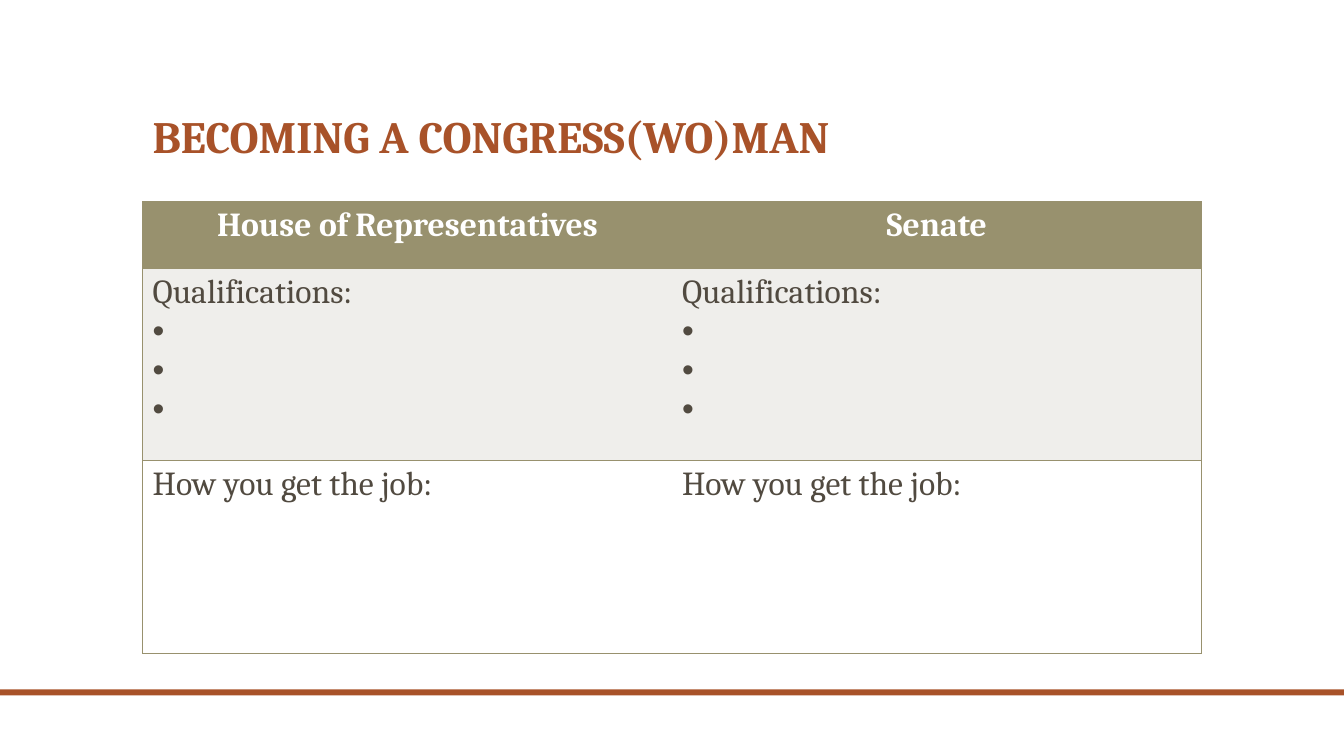
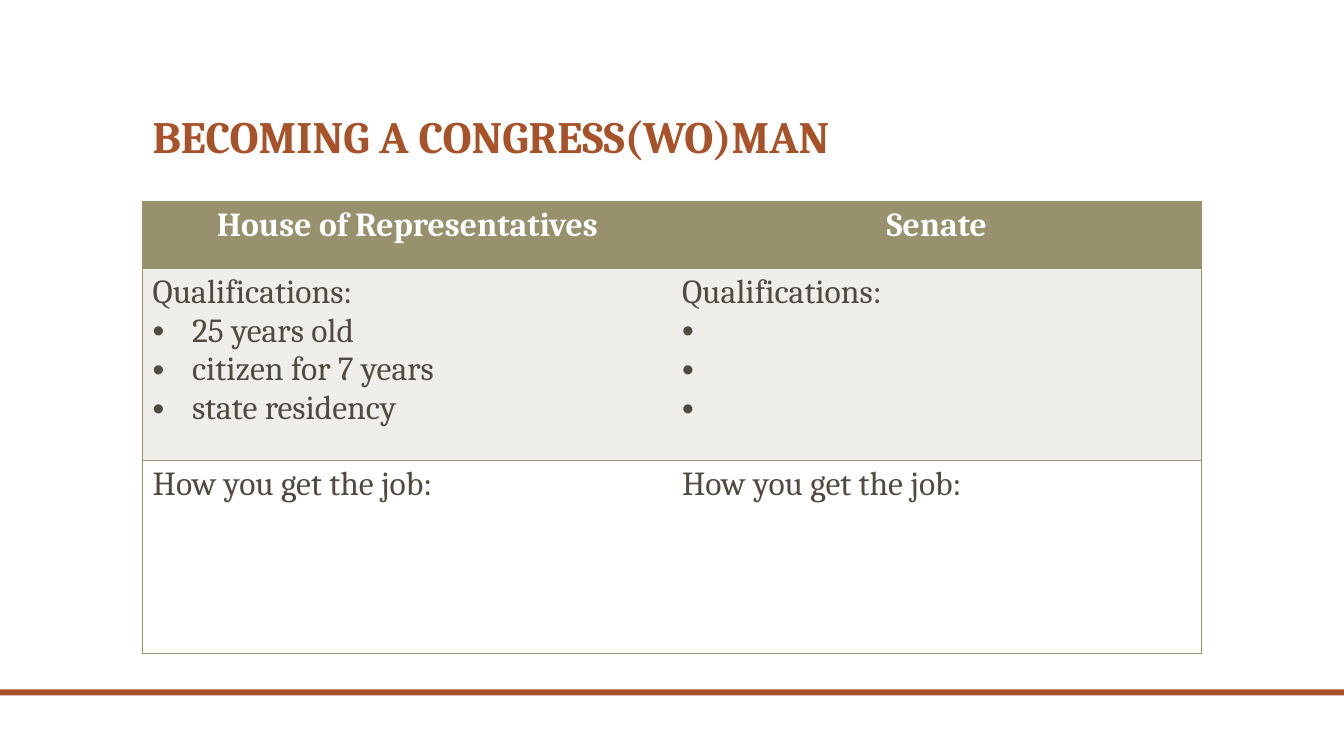
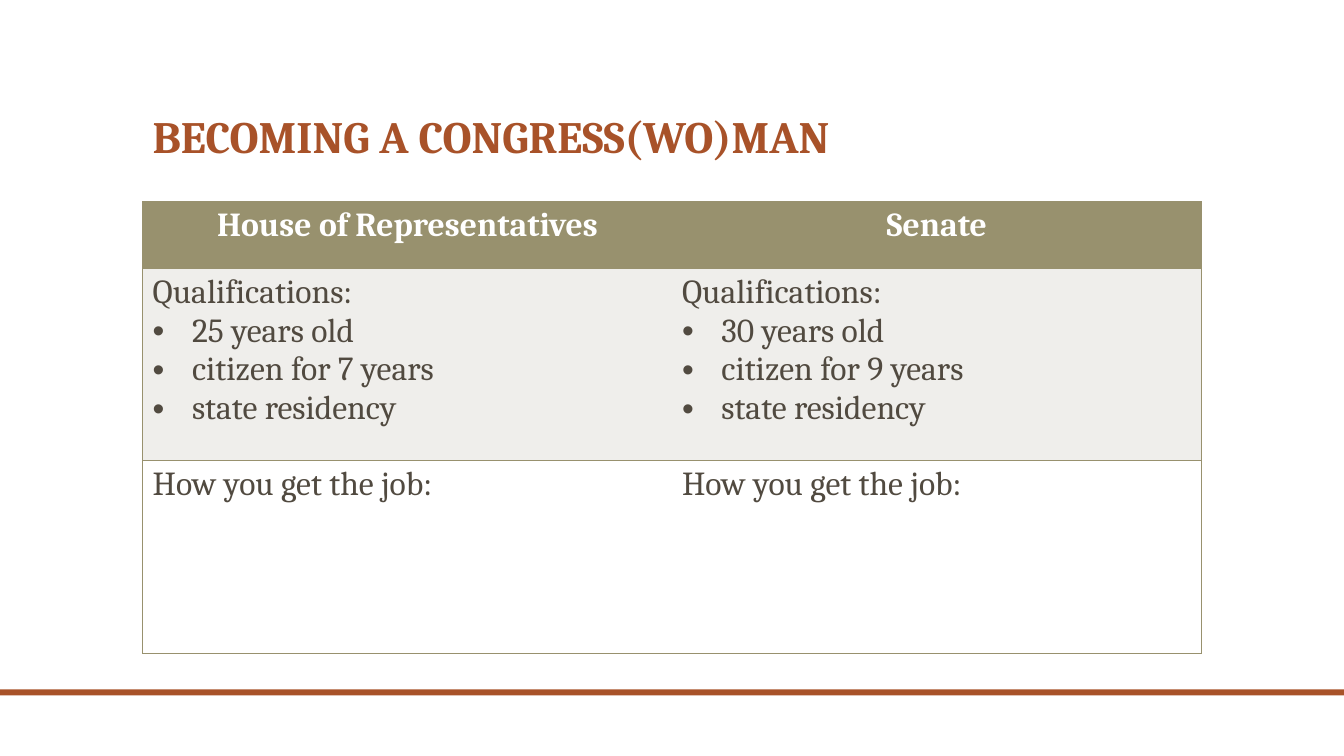
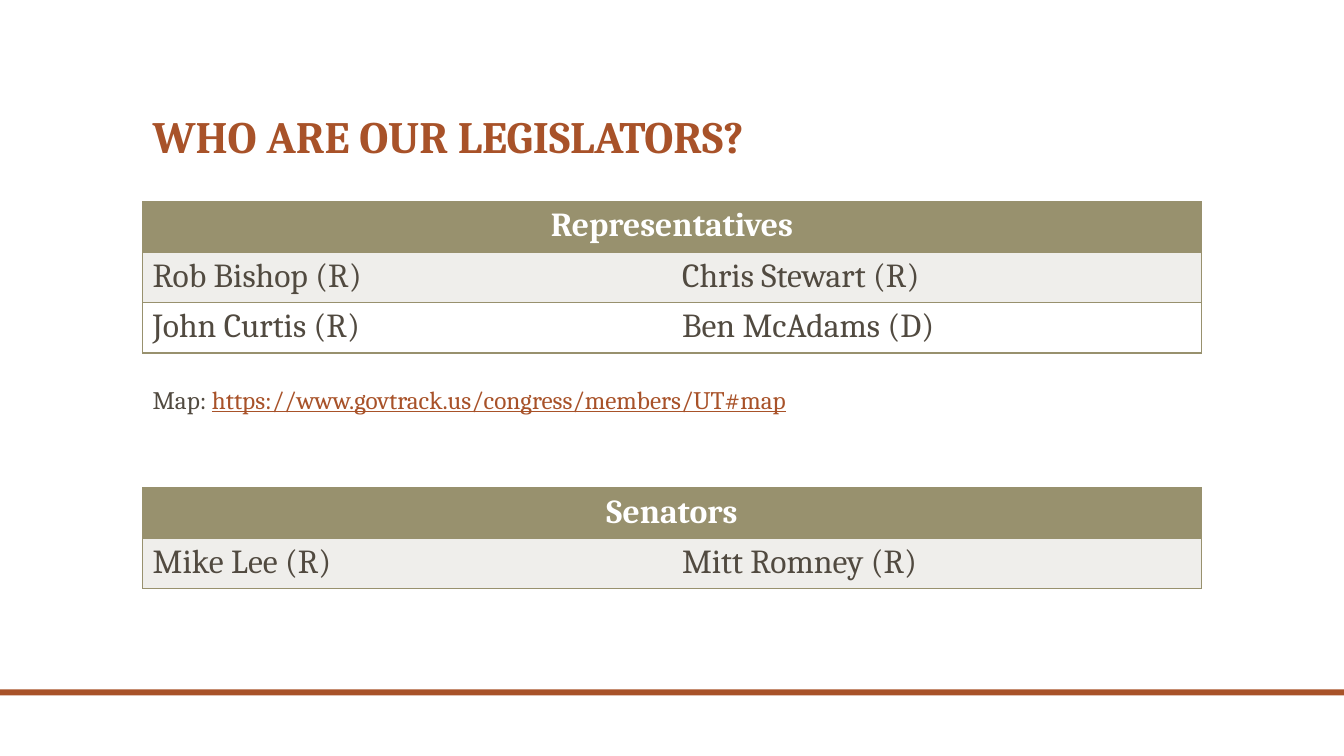
import pptx
import pptx.dml.color
import pptx.enum.shapes
import pptx.enum.text
import pptx.oxml.ns
import pptx.util
from lxml import etree
from dataclasses import dataclass

Inches = pptx.util.Inches
Pt = pptx.util.Pt
PP_ALIGN = pptx.enum.text.PP_ALIGN
ANCHOR = pptx.enum.text.MSO_ANCHOR


@dataclass(frozen=True)
class Theme:
    font: str = "Cambria"
    rust: str = "A85229"
    olive: str = "98916E"
    ink: str = "514A40"
    band: str = "EFEEEB"
    white: str = "FFFFFF"
    title_size: int = 32
    table_size: int = 24
    note_size: int = 18
    border: int = 1


THEME = Theme()

# Content: a list inside a cell becomes bullets, a one-cell row spans the table.
BLANK_ITEMS = [" "] * 3
HOUSE_ITEMS = ["25 years old", "citizen for 7 years", "state residency"]
SENATE_ITEMS = ["30 years old", "citizen for 9 years", "state residency"]
CHAMBER_STEPS = [
    (BLANK_ITEMS, BLANK_ITEMS),
    (HOUSE_ITEMS, BLANK_ITEMS),
    (HOUSE_ITEMS, SENATE_ITEMS),
]
REPRESENTATIVES = [
    ["Representatives"],
    ["Rob Bishop (R)", "Chris Stewart (R)"],
    ["John Curtis (R)", "Ben McAdams (D)"],
]
SENATORS = [
    ["Senators"],
    ["Mike Lee (R)", "Mitt Romney (R)"],
]
MAP_NOTE = ("Map: ", "https://www.govtrack.us/congress/members/UT#map")

# Layout, in inches
SLIDE_W, SLIDE_H = 13.33, 7.5
CONTENT_W = 10.5
LEFT = (SLIDE_W - CONTENT_W) / 2
TABLE_TOP = 2
COLUMNS = 2
CHAMBER_ROWS = [0.66, 1.91, 1.91]
NAME_ROW = 0.48
BULLET_INDENT = 0.39


def color(value):
    return pptx.dml.color.RGBColor.from_string(value)


def style(font, size, value, bold=False):
    font.name = THEME.font
    font.size = Pt(size)
    font.bold = bold
    font.color.rgb = color(value)


def add_text(slide, box, anchor=ANCHOR.TOP):
    tf = slide.shapes.add_textbox(*map(Inches, box)).text_frame
    tf.word_wrap = True
    tf.vertical_anchor = anchor
    return tf


def add_slide(prs, title):
    """Add a slide with the shared title and bottom band."""
    slide = prs.slides.add_slide(prs.slide_layouts[6])
    band = slide.shapes.add_shape(
        pptx.enum.shapes.MSO_SHAPE.RECTANGLE,
        0, Inches(6.84), Inches(SLIDE_W), Inches(0.06))
    band.shadow.inherit = False
    band.fill.solid()
    band.fill.fore_color.rgb = color(THEME.rust)
    band.line.fill.background()

    p = add_text(slide, (LEFT, 0.42, CONTENT_W, 1.25), ANCHOR.BOTTOM).paragraphs[0]
    p.text = title
    p.line_spacing = 0.9
    style(p.runs[0].font, THEME.title_size, THEME.rust, bold=True)
    return slide


def add_bullet(p):
    pPr = p._p.get_or_add_pPr()
    pPr.set("marL", str(Inches(BULLET_INDENT)))
    pPr.set("indent", str(-Inches(BULLET_INDENT)))
    qn = pptx.oxml.ns.qn
    etree.SubElement(pPr, qn("a:buFont"), typeface="Arial")
    etree.SubElement(pPr, qn("a:buChar"), char="•")


def set_borders(cell, sides):
    """Draw the named sides (of L, R, T, B) and clear the others."""
    qn = pptx.oxml.ns.qn
    tcPr = cell._tc.get_or_add_tcPr()
    for side in "LRTB":
        ln = etree.SubElement(tcPr, qn(f"a:ln{side}"), w=str(Pt(THEME.border)))
        if side in sides:
            fill = etree.SubElement(ln, qn("a:solidFill"))
            etree.SubElement(fill, qn("a:srgbClr"), val=THEME.olive)
        else:
            etree.SubElement(ln, qn("a:noFill"))


def fill_cell(cell, content, header):
    lines = content if isinstance(content, list) else [content]
    tf = cell.text_frame
    for i, line in enumerate(lines):
        p = tf.paragraphs[0] if i == 0 else tf.add_paragraph()
        if isinstance(line, tuple):
            p.text = line[0]
            add_bullet(p)
        else:
            p.text = line
        if header:
            p.alignment = PP_ALIGN.CENTER
        for r in p.runs:
            style(r.font, THEME.table_size, THEME.white if header else THEME.ink, header)


def add_table(slide, top, rows, heights):
    table = slide.shapes.add_table(
        len(rows), COLUMNS, Inches(LEFT), Inches(top),
        Inches(CONTENT_W), Inches(sum(heights))).table
    table.horz_banding = False
    row_fills = [THEME.olive, THEME.band, THEME.white]
    for i, (row, height) in enumerate(zip(rows, heights)):
        table.rows[i].height = Inches(height)
        spans = len(row) == 1
        for j in range(COLUMNS):
            cell = table.cell(i, j)
            left = "L" if j == 0 else ""
            right = "R" if spans or j == COLUMNS - 1 else ""
            set_borders(cell, "TB" + left + right)
            cell.fill.solid()
            cell.fill.fore_color.rgb = color(row_fills[i])
        for j, content in enumerate(row):
            fill_cell(table.cell(i, j), content, header=i == 0)
        if spans:
            table.cell(i, 0).merge(table.cell(i, COLUMNS - 1))


def add_chamber_slide(prs, item_lists):
    slide = add_slide(prs, "BECOMING A CONGRESS(WO)MAN")
    rows = [
        ["House of Representatives", "Senate"],
        [["Qualifications:"] + [(item,) for item in items] for items in item_lists],
        ["How you get the job:"] * COLUMNS,
    ]
    add_table(slide, TABLE_TOP, rows, CHAMBER_ROWS)


def add_legislators_slide(prs):
    slide = add_slide(prs, "WHO ARE OUR LEGISLATORS?")
    for top, rows in ((TABLE_TOP, REPRESENTATIVES), (4.84, SENATORS)):
        add_table(slide, top, rows, [NAME_ROW] * len(rows))
    p = add_text(slide, (LEFT, 3.76, 7.71, 0.4)).paragraphs[0]
    for text, value in zip(MAP_NOTE, (THEME.ink, THEME.rust)):
        r = p.add_run()
        r.text = text
        style(r.font, THEME.note_size, value)
    p.runs[-1].font.underline = True


def main():
    prs = pptx.Presentation()
    prs.slide_width, prs.slide_height = Inches(SLIDE_W), Inches(SLIDE_H)
    for item_lists in CHAMBER_STEPS:
        add_chamber_slide(prs, item_lists)
    add_legislators_slide(prs)
    prs.save("out.pptx")


if __name__ == "__main__":
    main()
